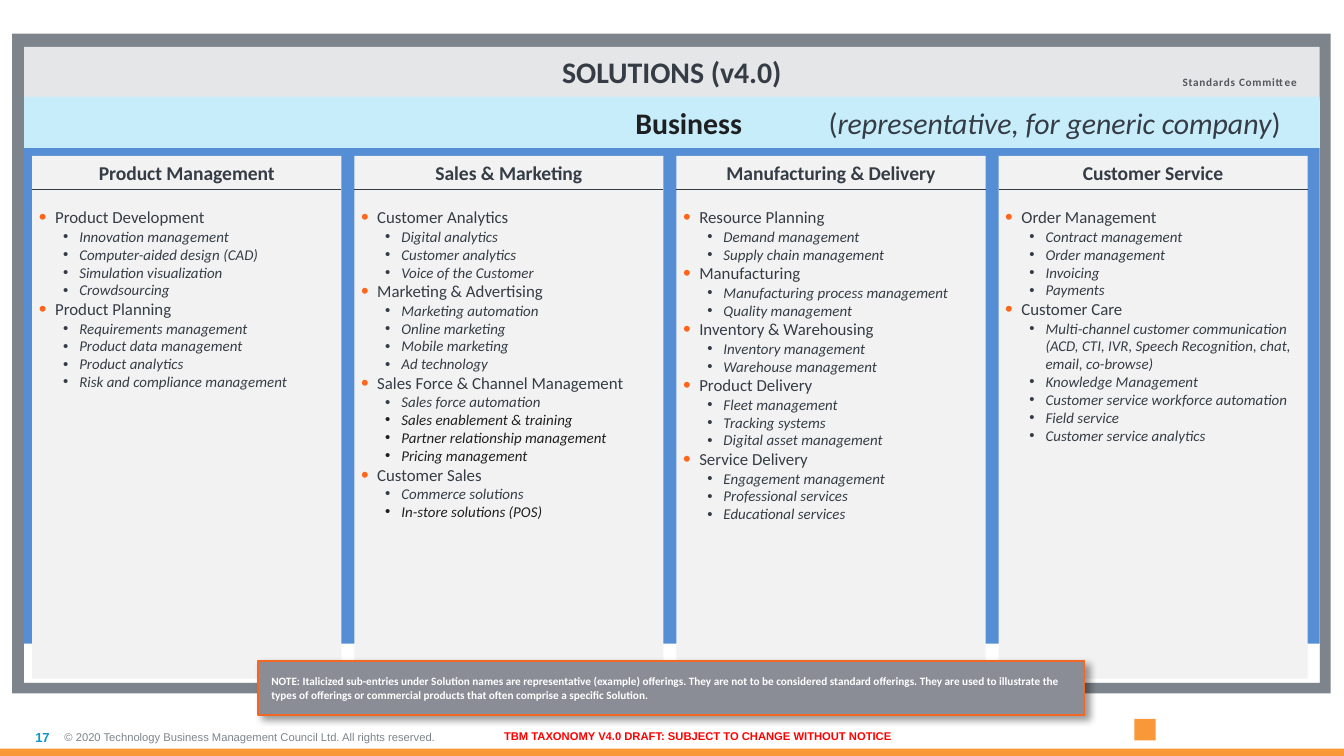
from lxml.etree import SubElement
from pptx import Presentation
from pptx.dml.color import RGBColor
from pptx.enum.shapes import MSO_CONNECTOR, MSO_SHAPE
from pptx.enum.text import MSO_ANCHOR, PP_ALIGN
from pptx.oxml.ns import qn
from pptx.util import Inches, Pt

WHITE = RGBColor(0xFF, 0xFF, 0xFF)
SLATE = RGBColor(0x35, 0x3C, 0x45)
INK = RGBColor(0x1E, 0x1F, 0x21)
GREY = RGBColor(0x7E, 0x84, 0x8B)
SILVER = RGBColor(0xE5, 0xE6, 0xE8)
PALE = RGBColor(0xF2, 0xF2, 0xF2)
SKY = RGBColor(0xC7, 0xED, 0xFB)
BLUE = RGBColor(0x55, 0x8E, 0xD5)
TEAL = RGBColor(0x0D, 0x96, 0xC9)
STONE = RGBColor(0x53, 0x56, 0x5C)
STEEL = RGBColor(0x8A, 0x8D, 0x95)
AMBER = RGBColor(0xF8, 0x98, 0x38)
RUST = RGBColor(0xF2, 0x67, 0x24)
ORANGE = RGBColor(0xFF, 0x66, 0x1C)
RED = RGBColor(0xFF, 0x00, 0x00)

COLUMNS = [
    ("Product Management", [
        ("Product Development", ["Innovation management", "Computer-aided design (CAD)",
                                 "Simulation visualization", "Crowdsourcing"]),
        ("Product Planning", ["Requirements management", "Product data management",
                              "Product analytics", "Risk and compliance management"]),
    ]),
    ("Sales & Marketing", [
        ("Customer Analytics", ["Digital analytics", "Customer analytics",
                                "Voice of the Customer"]),
        ("Marketing & Advertising", ["Marketing automation", "Online marketing",
                                     "Mobile marketing", "Ad technology"]),
        ("Sales Force & Channel Management", [
            "Sales force automation", "Sales enablement & training",
            "Partner relationship management", "Pricing management"]),
        ("Customer Sales", ["Commerce solutions", "In-store solutions (POS)"]),
    ]),
    ("Manufacturing & Delivery", [
        ("Resource Planning", ["Demand management", "Supply chain management"]),
        ("Manufacturing", ["Manufacturing process management", "Quality management"]),
        ("Inventory & Warehousing", ["Inventory management", "Warehouse management"]),
        ("Product Delivery", ["Fleet management", "Tracking systems",
                              "Digital asset management"]),
        ("Service Delivery", ["Engagement management", "Professional services",
                              "Educational services"]),
    ]),
    ("Customer Service", [
        ("Order Management", ["Contract management", "Order management",
                              "Invoicing", "Payments"]),
        ("Customer Care", [
            "Multi-channel customer communication (ACD, CTI, IVR, Speech Recognition, "
            "chat, email, co-browse)",
            "Knowledge Management", "Customer service workforce automation",
            "Field service", "Customer service analytics"]),
    ]),
]
DARK = {"Sales enablement & training", "Partner relationship management",
        "Pricing management", "In-store solutions (POS)"}
NOTE = ("NOTE: Italicized sub-entries under Solution names are representative (example) "
        "offerings. They are not to be considered standard offerings. They are used to "
        "illustrate the types of offerings or commercial products that often comprise "
        "a specific Solution.")
RIGHTS = "© 2020 Technology Business Management Council Ltd. All rights reserved."
DRAFT = "TBM TAXONOMY V4.0 DRAFT: SUBJECT TO CHANGE WITHOUT NOTICE"

LEFT, LAST, WIDE = 0.24, 7.43, 2.3
STEP = (LAST - LEFT) / (len(COLUMNS) - 1)

deck = Presentation()
deck.slide_width, deck.slide_height = Inches(10), Inches(10 * 9 / 16)
slide = deck.slides.add_slide(deck.slide_layouts[6])


def node(up, tag, **attrs):
    return SubElement(up, qn(tag), {key: str(val) for key, val in attrs.items()})


def box(x, y, w, h, fill):
    shape = slide.shapes.add_shape(
        MSO_SHAPE.RECTANGLE, Inches(x), Inches(y), Inches(w), Inches(h))
    shape.shadow.inherit = False
    shape.fill.solid()
    shape.fill.fore_color.rgb = fill
    shape.line.fill.background()
    return shape


def frame(shape, inset=0.0, anchor=MSO_ANCHOR.MIDDLE, wrap=True):
    body = shape.text_frame
    body.margin_left = body.margin_right = Inches(inset)
    body.margin_top = body.margin_bottom = Inches(inset)
    body.vertical_anchor = anchor
    body.word_wrap = wrap
    return body


def label(x, y, w, h, **opts):
    area = slide.shapes.add_textbox(Inches(x), Inches(y), Inches(w), Inches(h))
    return frame(area, **opts).paragraphs[0]


def indent(para, level, left, mark=None):
    para.level = level
    props = para._p.get_or_add_pPr()
    props.set("marL", str(Inches(left)))
    props.set("indent", str(Inches(-0.12)))
    if mark:
        node(node(props, "a:buClr"), "a:srgbClr", val=mark)
        node(props, "a:buSzPct", val=130000)
    node(props, "a:buFont", typeface="Arial")
    node(props, "a:buChar", char="•")


def write(para, text, size=8, color=SLATE, bold=False, italic=False,
          face="Calibri", align=PP_ALIGN.LEFT, space=None):
    para.alignment = align
    run = para.add_run()
    run.text = text
    font = run.font
    font.size, font.name, font.bold, font.italic = Pt(size), face, bold, italic
    font.color.rgb = color
    if space:
        run._r.get_or_add_rPr().set("spc", str(space))


def column(x, title, groups):
    body = frame(box(x, 1.16, WIDE, 3.89, PALE), 0.04, MSO_ANCHOR.TOP)
    head = body.paragraphs[0]
    head.space_after = Pt(12)
    write(head, title, size=10.5, bold=True, align=PP_ALIGN.CENTER)
    for name, items in groups:
        para = body.add_paragraph()
        indent(para, 1, 0.13, ORANGE)
        write(para, name, size=9)
        for item in items:
            para = body.add_paragraph()
            indent(para, 2, 0.31)
            write(para, item, italic=True, color=INK if item in DARK else SLATE)
    rule = slide.shapes.add_connector(
        MSO_CONNECTOR.STRAIGHT, Inches(x), Inches(1.41), Inches(x + WIDE), Inches(1.41))
    rule.line.color.rgb = SLATE
    rule.line.width = Pt(1)
    node(rule._element.spPr, "a:effectLst")


write(label(0.48, 5.34, 3.36, 0.29), RIGHTS, size=6, color=GREY, face="Arial")
write(label(0, 5.34, 0.37, 0.29), "17", size=7, color=TEAL, bold=True,
      face="Arial", align=PP_ALIGN.RIGHT)
box(8.44, 5.35, 0.16, 0.16, AMBER)
box(0, 5.57, 10, 0.06, AMBER)
write(label(3.73, 5.43, 2.92, 0.1, wrap=False), DRAFT, size=6, color=RED,
      bold=True, face="Arial", align=PP_ALIGN.CENTER)

box(0.09, 0.25, 9.81, 4.91, GREY)
title = frame(box(0.18, 0.35, 9.64, 4.73, SILVER), 0.05, MSO_ANCHOR.TOP)
write(title.paragraphs[0], "SOLUTIONS (v4.0)", size=16, bold=True, align=PP_ALIGN.CENTER)
box(0.18, 0.75, 9.64, 4.33, WHITE)
write(label(8.8, 0.56, 0.87, 0.1, anchor=MSO_ANCHOR.TOP, wrap=False),
      "Standards Committee", size=6, color=STONE, bold=True, space=40)
box(0.18, 1.1, 9.64, 3.69, BLUE)

band = frame(box(0.18, 0.72, 9.64, 0.38, SKY), 0.1).paragraphs[0]
tabs = node(band._p.get_or_add_pPr(), "a:tabLst")
for stop, side in ((4.68, "ctr"), (9.06, "r")):
    node(tabs, "a:tab", pos=Inches(stop), algn=side)
for text, look in (
    ("\tBusiness \t", dict(color=INK, bold=True)),
    ("(", {}),
    ("representative, for generic company", dict(italic=True)),
    (")", {}),
):
    write(band, text, size=16, align=PP_ALIGN.CENTER, **look)

for spot, (name, groups) in enumerate(COLUMNS):
    column(LEFT + spot * STEP, name, groups)

note = box(1.92, 4.92, 6.15, 0.4, STEEL)
note.line.color.rgb = RUST
note.line.width = Pt(0.75)
cast = node(note._element.spPr.find(qn("a:effectLst")), "a:outerShdw",
            blurRad=Pt(4), dist=Pt(3), dir=45 * 60000, algn="tl", rotWithShape=0)
node(node(cast, "a:srgbClr", val="000000"), "a:alpha", val=40000)
write(frame(note, 0.1).paragraphs[0], NOTE, size=6, color=WHITE, bold=True)

deck.save("out.pptx")
